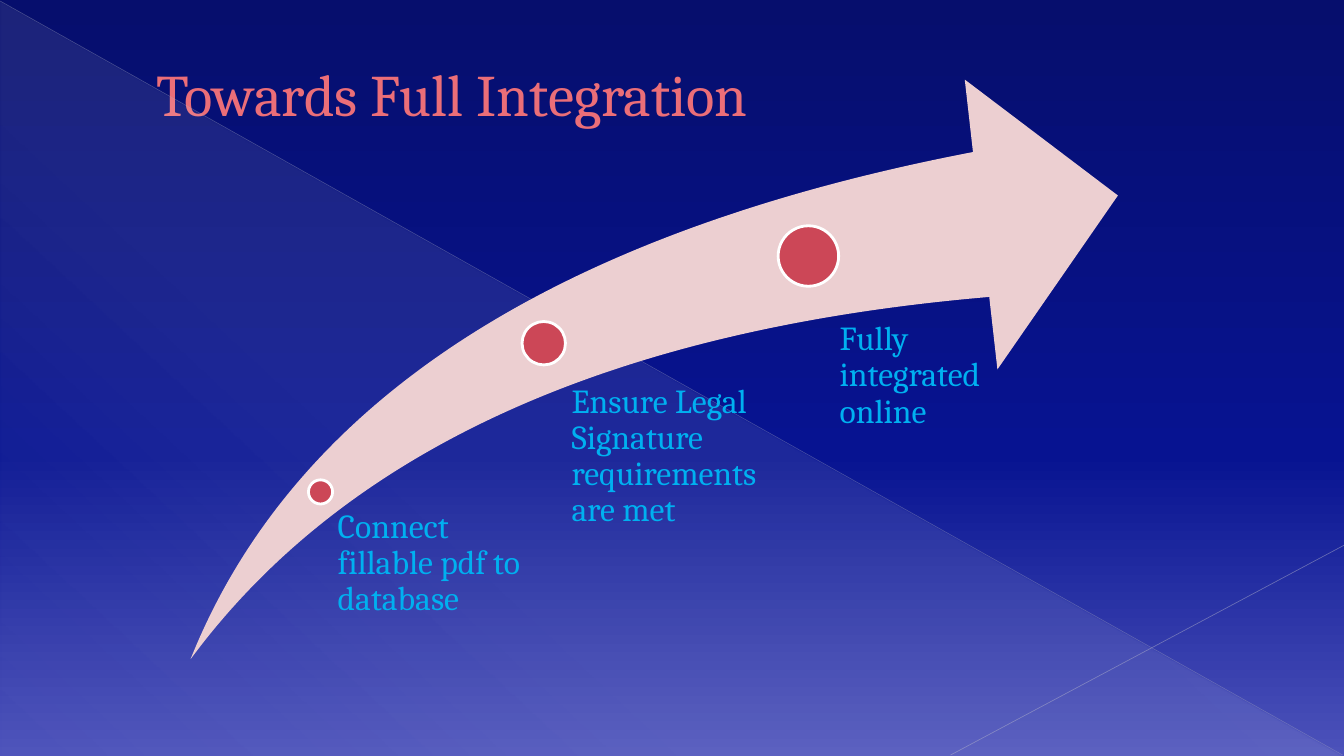
from dataclasses import dataclass

from lxml.etree import SubElement
from pptx import Presentation
from pptx.dml.color import RGBColor
from pptx.enum.shapes import MSO_CONNECTOR as Connector, MSO_SHAPE as Shape
from pptx.enum.text import MSO_ANCHOR as Anchor, MSO_AUTO_SIZE as AutoSize, PP_ALIGN as Align
from pptx.oxml.ns import qn
from pptx.util import Inches, Pt

WIDTH, HEIGHT = Inches(13.33), Inches(7.5)


@dataclass(frozen=True)
class Theme:
    font: str = "Cambria"
    title_size: float = 42
    label_size: float = 24
    title: str = "EB6E78"
    title_outline: str = "8D313C"
    label: str = "00B0F0"
    arrow: str = "ECCFD1"
    dot: str = "CC4757"
    white: str = "FFFFFF"
    # Gradient stops: position, colour, opacity (all shares in percent)
    backdrop: tuple = ((0, "060E6D", 100), (60, "071391", 100), (100, "4C52BA", 100))
    sheen: tuple = ((0, "FFFFFF", 10), (70, "FFFFFF", 8), (100, "FFFFFF", 1))


THEME = Theme()

# Dot: centre x, centre y, diameter; label: left, top, width, height, inset.
# All are percentages of the slide's size.
MILESTONES = (
    ("Connect fillable pdf to database",
     (23.85, 65.07, 1.8), (24.15, 67.33, 16.05, 15.47, 0.98)),
    ("Ensure Legal Signature requirements are met",
     (40.46, 45.4, 3.23), (40.8, 50.8, 16.58, 20.93, 1.73)),
    ("Fully integrated online",
     (60.15, 33.87, 4.5), (60.08, 42.53, 16.58, 16.27, 2.4)),
)


def across(percent):
    return round(WIDTH * percent / 100)


def down(percent):
    return round(HEIGHT * percent / 100)


def box(left, top, width, height):
    return across(left), down(top), across(width), down(height)


def add_color(parent, color, opacity=100):
    """Append a colour element with its opacity in percent."""
    element = SubElement(parent, qn("a:srgbClr"), val=color)
    if opacity < 100:
        SubElement(element, qn("a:alpha"), val=str(opacity * 1000))


def set_gradient(fill, owner, stops, angle):
    """Fill with a linear gradient; angle runs clockwise in degrees."""
    fill.gradient()
    fill.gradient_angle = 360 - angle
    stop_list = next(owner.iter(qn("a:gsLst")))
    stop_list.clear()
    for position, color, opacity in stops:
        stop = SubElement(stop_list, qn("a:gs"), pos=str(position * 1000))
        add_color(stop, color, opacity)


def add_shape(slide, kind, bounds, fill=None, line=None, line_width=2):
    shape = slide.shapes.add_shape(kind, *bounds)
    shape.shadow.inherit = False
    if fill:
        shape.fill.solid()
        shape.fill.fore_color.rgb = RGBColor.from_string(fill)
    if line:
        shape.line.color.rgb = RGBColor.from_string(line)
        shape.line.width = Pt(line_width)
    else:
        shape.line.fill.background()
    return shape


def add_line(slide, start, end, color, width, opacity):
    line = slide.shapes.add_connector(
        Connector.STRAIGHT, across(start[0]), down(start[1]), across(end[0]), down(end[1]))
    line.line.color.rgb = RGBColor.from_string(color)
    line.line.width = Pt(width)
    properties = line._element.spPr
    SubElement(next(properties.iter(qn("a:srgbClr"))), qn("a:alpha"), val=str(opacity * 1000))
    SubElement(properties, qn("a:effectLst"))


def write_text(frame, text, *, size, color, spacing=None, anchor=Anchor.TOP):
    """Write one left-aligned paragraph and return it."""
    frame.word_wrap = True
    frame.auto_size = AutoSize.NONE
    frame.vertical_anchor = anchor
    paragraph = frame.paragraphs[0]
    paragraph.alignment = Align.LEFT
    if spacing:
        paragraph.line_spacing = spacing
    run = paragraph.add_run()
    run.text = text
    run.font.name = THEME.font
    run.font.size = Pt(size)
    run.font.color.rgb = RGBColor.from_string(color)
    return paragraph


def add_backdrop(slide):
    fill = slide.background.fill
    set_gradient(fill, slide._element, THEME.backdrop, 90)
    triangle = add_shape(slide, Shape.RIGHT_TRIANGLE, box(0.08, 0.27, 99.83, 99.73))
    set_gradient(triangle.fill, triangle._element, THEME.sheen, 133)
    add_line(slide, (0, 0.13), (99.9, 99.87), "B1B2C7", 0.39, 35)
    add_line(slide, (100, 72.13), (70.73, 99.87), "BABACD", 0.47, 45)


def add_title(slide, text):
    title = slide.shapes.title
    title.left, title.top, title.width, title.height = box(6.9, 5.33, 86.25, 13.87)
    paragraph = write_text(title.text_frame, text, size=THEME.title_size,
                           color=THEME.title, anchor=Anchor.MIDDLE)
    properties = paragraph._p.get_or_add_pPr()
    properties.set("marL", str(across(3.98)))
    properties.set("indent", "0")
    # Thin outline around the letters
    run_properties = paragraph.runs[0]._r.get_or_add_rPr()
    outline = SubElement(run_properties, qn("a:ln"), w=str(Pt(0.5)))
    add_color(SubElement(outline, qn("a:solidFill")), THEME.title_outline)
    run_properties.insert(0, outline)


def add_milestone(slide, text, dot, label):
    center_x, center_y, diameter = dot
    side = across(diameter)
    add_shape(slide, Shape.OVAL,
              (across(center_x) - side // 2, down(center_y) - side // 2, side, side),
              fill=THEME.dot, line=THEME.white)
    *bounds, inset = label
    frame = slide.shapes.add_textbox(*box(*bounds)).text_frame
    frame.margin_left = across(inset)
    frame.margin_top = frame.margin_right = frame.margin_bottom = 0
    write_text(frame, text, size=THEME.label_size, color=THEME.label, spacing=0.9)


def main():
    presentation = Presentation()
    presentation.slide_width, presentation.slide_height = WIDTH, HEIGHT
    slide = presentation.slides.add_slide(presentation.slide_layouts.get_by_name("Title Only"))

    add_backdrop(slide)

    # Rising arrow with its milestones
    arrow = add_shape(slide, Shape.SWOOSH_ARROW, box(14.18, 10.53, 69, 76.67), fill=THEME.arrow)
    arrow.adjustments[0] = arrow.adjustments[1] = 0.25
    for text, dot, label in MILESTONES:
        add_milestone(slide, text, dot, label)

    add_title(slide, "Towards Full Integration")
    presentation.save("out.pptx")


if __name__ == "__main__":
    main()
